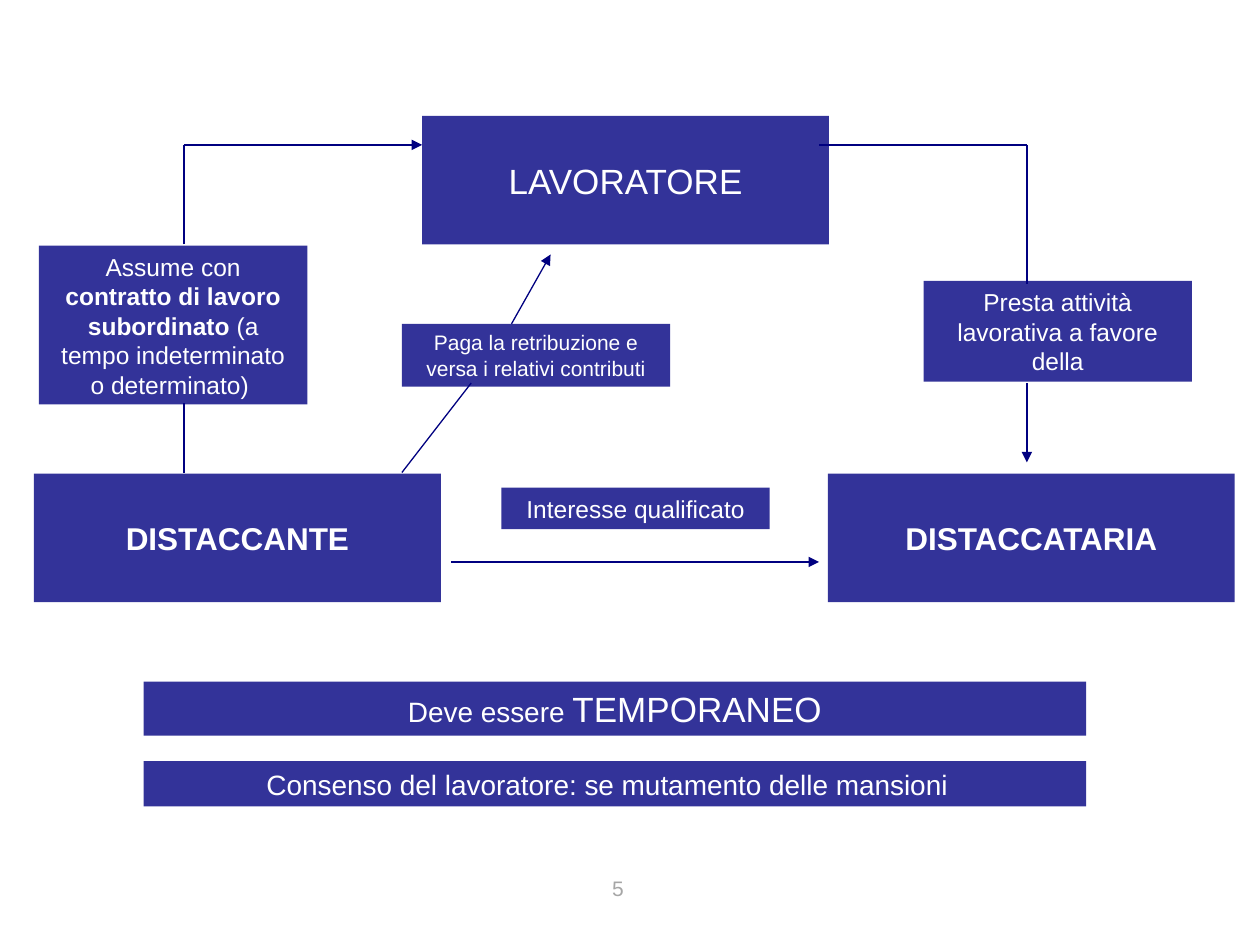
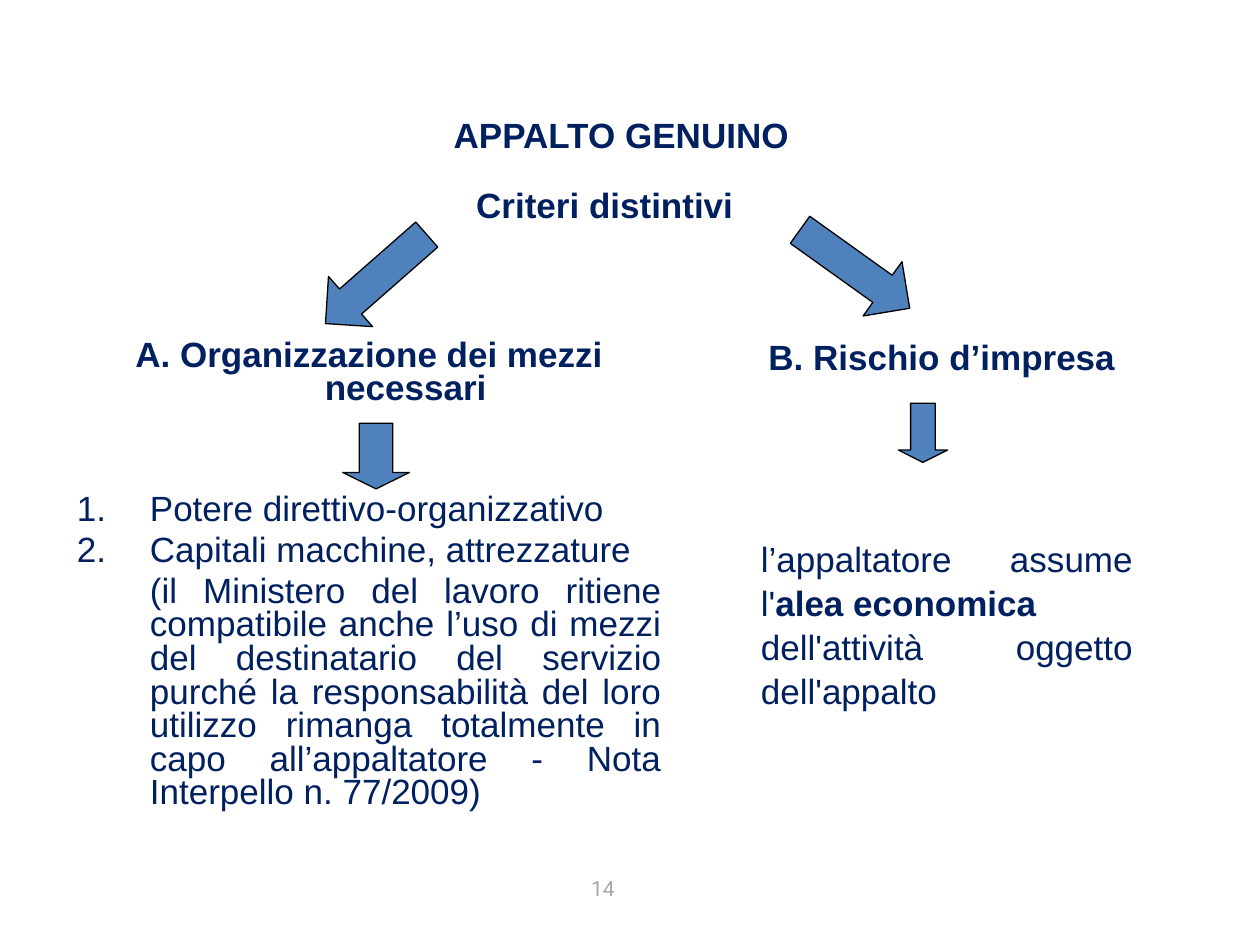
from lxml import etree
from pptx import Presentation
from pptx import util as u
from pptx.dml import color as dml
from pptx.enum import shapes, text
from pptx.oxml import ns

COLORS = {
    "box": "333399",
    "link": "000080",
    "ink": "002060",
    "arrow": "4F81BD",
    "outline": "000000",
    "white": "FFFFFF",
    "page": "A6A6A6",
}
CENTER, JUSTIFY = text.PP_ALIGN.CENTER, text.PP_ALIGN.JUSTIFY
TOP, MIDDLE, BOTTOM = text.MSO_ANCHOR.TOP, text.MSO_ANCHOR.MIDDLE, text.MSO_ANCHOR.BOTTOM
BLANK, TWO_CONTENT = 6, 3


def rgb(name):
    return dml.RGBColor.from_string(COLORS[name])


def inches(*values):
    return [u.Inches(value) for value in values]


def write(paragraph, content, size=20, color="ink", bold=False, font="Arial", align=CENTER,
          spacing=None, before=None, hanging=None, bullet=None):
    run = paragraph.add_run()
    run.text = content
    run.font.name, run.font.size, run.font.bold = font, u.Pt(size), bold
    run.font.color.rgb = rgb(color)
    paragraph.alignment = align
    if spacing:
        paragraph.line_spacing = spacing
    if before is not None:
        paragraph.space_before = u.Pt(before)
    if hanging:
        margin, indent = hanging
        properties = paragraph._p.get_or_add_pPr()
        properties.set("marL", str(u.Inches(margin)))
        properties.set("indent", str(u.Inches(indent)))
        mark = etree.SubElement(properties, ns.qn("a:buAutoNum" if bullet else "a:buNone"))
        if bullet:
            mark.set("type", bullet)


class Deck:
    def __init__(self):
        self.presentation = Presentation()
        self.presentation.slide_width, self.presentation.slide_height = inches(10, 7.5)
        self.slide = None

    def new_slide(self, layout):
        self.slide = self.presentation.slides.add_slide(self.presentation.slide_layouts[layout])

    def shape(self, kind, at, fill):
        item = self.slide.shapes.add_shape(kind, *inches(*at))
        item.shadow.inherit = False
        item.fill.solid()
        item.fill.fore_color.rgb = rgb(fill)
        item.line.fill.background()
        return item

    def box(self, at, runs, size, anchor=TOP, wrap=True):
        frame = self.shape(shapes.MSO_SHAPE.RECTANGLE, at, "box").text_frame
        frame.word_wrap, frame.vertical_anchor = wrap, anchor
        for content, style in runs:
            write(frame.paragraphs[0], content, **{"size": size, "color": "white", **style})
        return frame

    def block_arrow(self, at, head, rotation=0):
        arrow = self.shape(shapes.MSO_SHAPE.DOWN_ARROW, at, "arrow")
        arrow.adjustments[0], arrow.adjustments[1] = 0.5, head
        arrow.rotation = rotation
        arrow.line.color.rgb, arrow.line.width = rgb("outline"), u.Pt(0.75)

    def link(self, start, end, arrow=False):
        line = self.slide.shapes.add_connector(
            shapes.MSO_CONNECTOR.STRAIGHT, *inches(*start, *end))
        line.line.color.rgb, line.line.width = rgb("link"), u.Pt(0.75)
        if arrow:
            tail = etree.SubElement(line.line._get_or_add_ln(), ns.qn("a:tailEnd"))
            tail.set("type", "triangle")
        etree.SubElement(line._element.spPr, ns.qn("a:effectLst"))

    def label(self, at, anchor=TOP):
        frame = self.slide.shapes.add_textbox(*inches(*at)).text_frame
        frame.word_wrap, frame.vertical_anchor = True, anchor
        return frame

    def placeholder(self, index, at, anchor=TOP):
        item = self.slide.placeholders[index]
        item.left, item.top, item.width, item.height = inches(*at)
        frame = item.text_frame
        frame.auto_size, frame.vertical_anchor = text.MSO_AUTO_SIZE.NONE, anchor
        return frame

    def page_number(self, number, left, font="Arial"):
        frame = self.label((left, 6.9, 2.33, 0.4))
        write(frame.paragraphs[0], number, size=12, color="page", font=font)


def secondment_slide(deck):
    deck.new_slide(BLANK)
    strong = {"bold": True}
    parties = [
        (0.27, 3.76, "DISTACCANTE", 18, strong),
        (6.57, 3.76, "DISTACCATARIA", 18, strong),
        (3.35, 0.92, "LAVORATORE", 20, {}),
    ]
    for left, top, name, size, style in parties:
        deck.box((left, top, 3.23, 1.02), [(name, style)], size, MIDDLE, wrap=False)

    duties = [
        (7.33, 2.23, 0.8, 14, [("Presta attività lavorativa a favore della", {})]),
        (3.98, 3.87, 0.33, 14, [("Interesse qualificato", {})]),
        (3.19, 2.57, 0.5, 12, [("Paga la retribuzione e versa i relativi contributi", {})]),
        (0.31, 1.95, 1.26, 14, [("Assume con ", {}),
                                ("contratto di lavoro subordinato ", strong),
                                ("(a tempo indeterminato o determinato) ", {})]),
    ]
    for left, top, height, size, runs in duties:
        deck.box((left, top, 2.13, height), runs, size)

    deck.box((1.14, 5.41, 7.48, 0.43),
             [("Deve essere ", {}), ("TEMPORANEO", {"size": 20})], 16)
    consent = deck.box((1.14, 6.04, 7.48, 0.36),
                       [("Consenso del lavoratore: se mutamento delle mansioni", {})], 16)
    consent.margin_right = u.Inches(0.22)

    hire_x, work_x, upper_y = 1.46, 8.15, 1.15
    for start, end in [
        ((hire_x, upper_y), (3.35, upper_y)),
        ((3.58, 4.46), (6.5, 4.46)),
        ((work_x, 3.04), (work_x, 3.67)),
        ((4.06, 2.57), (4.37, 2.02)),
    ]:
        deck.link(start, end, arrow=True)
    for start, end in [
        ((hire_x, 3.2), (hire_x, 3.75)),
        ((hire_x, 1.94), (hire_x, upper_y)),
        ((work_x, upper_y), (work_x, 2.25)),
        ((6.5, upper_y), (work_x, upper_y)),
        ((3.74, 3.04), (3.19, 3.75)),
    ]:
        deck.link(start, end)
    deck.page_number("5", 3.74)


def genuine_contract_slide(deck):
    deck.new_slide(TWO_CONTENT)
    title = deck.placeholder(0, (0.43, 0.6, 9, 0.94), MIDDLE)
    write(title.paragraphs[0], "APPALTO GENUINO", bold=True)

    means = deck.placeholder(1, (0.51, 2.65, 4.84, 3.91))
    hanging = (0.58, -0.58)
    write(means.paragraphs[0], "A. Organizzazione dei mezzi necessari", bold=True,
          spacing=0.8, before=4, hanging=hanging)
    for content, before, indents, bullet in [
        ("Potere direttivo-organizzativo", 50, hanging, "arabicPeriod"),
        ("Capitali macchine, attrezzature", 4, hanging, "arabicPeriod"),
        ("(il Ministero del lavoro ritiene compatibile anche l’uso di mezzi del destinatario "
         "del servizio purché la responsabilità del loro utilizzo rimanga totalmente in capo "
         "all’appaltatore - Nota Interpello n. 77/2009)", 4, (0.58, 0), None),
    ]:
        write(means.add_paragraph(), content, align=JUSTIFY, spacing=0.8, before=before,
              hanging=indents, bullet=bullet)

    risk = deck.placeholder(2, (5.31, 2.65, 4.33, 0.7))
    write(risk.paragraphs[0], "B. Rischio d’impresa", bold=True, spacing=0.9, before=4,
          hanging=(0.38, -0.38))

    for at, head, rotation in [
        ((2.72, 1.68, 0.53, 1.07), 0.5, 48.7),
        ((6.52, 1.6, 0.53, 1.07), 0.5, 305.6),
        ((2.72, 3.36, 0.53, 0.52), 0.25, 0),
        ((7.13, 3.2, 0.39, 0.47), 0.25, 0),
    ]:
        deck.block_arrow(at, head, rotation)

    criteria = deck.label((2.95, 1.07, 3.7, 0.77), BOTTOM)
    write(criteria.paragraphs[0], "Criteri distintivi", bold=True)

    hazard = deck.label((5.94, 4.22, 3.15, 1.45), MIDDLE)
    justified = {"align": JUSTIFY, "spacing": 1.05}
    write(hazard.paragraphs[0], "l’appaltatore assume l'", **justified)
    write(hazard.paragraphs[0], "alea economica", bold=True, **justified)
    write(hazard.add_paragraph(), "dell'attività oggetto dell'appalto", **justified)
    deck.page_number("14", 3.62, "Roboto")


def main():
    deck = Deck()
    secondment_slide(deck)
    genuine_contract_slide(deck)
    deck.presentation.save("out.pptx")


if __name__ == "__main__":
    main()
